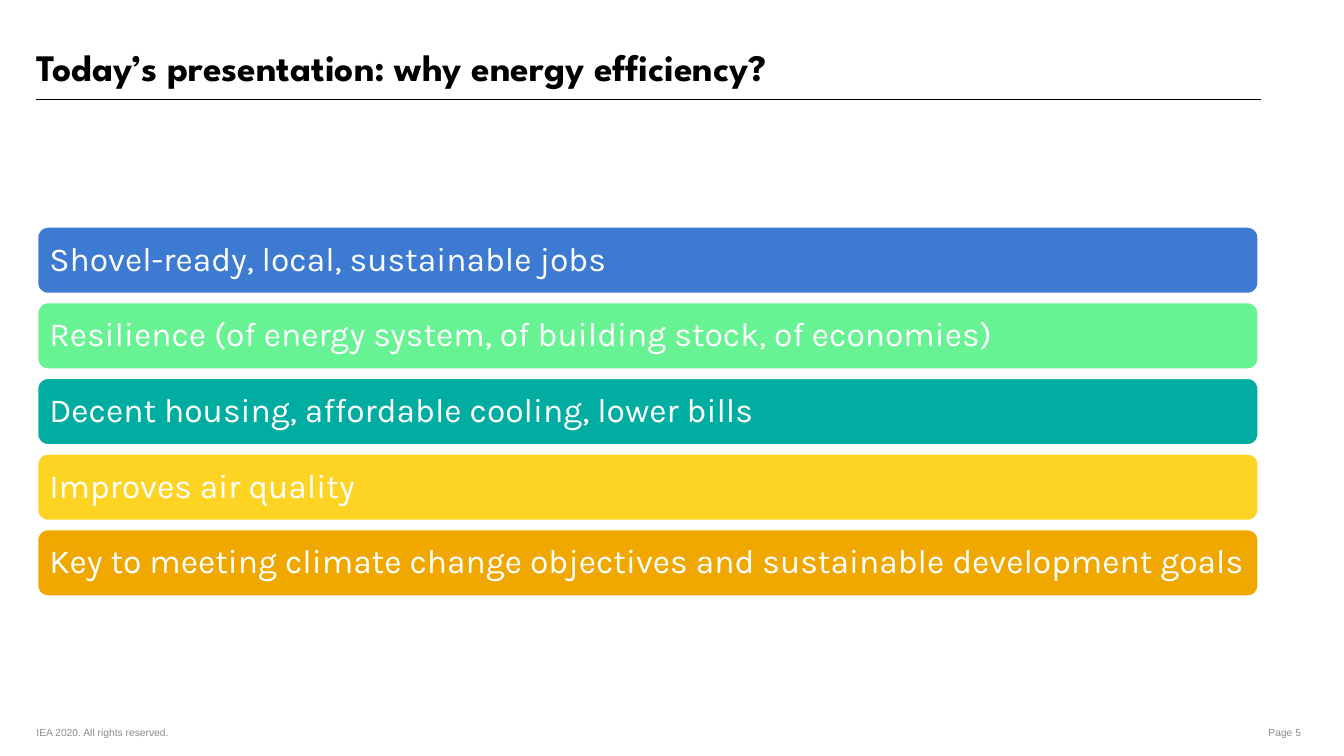
from lxml import etree
from pptx import Presentation
from pptx.dml.color import RGBColor
from pptx.enum.shapes import MSO_CONNECTOR, MSO_SHAPE
from pptx.enum.text import MSO_ANCHOR, MSO_AUTO_SIZE, PP_ALIGN
from pptx.oxml.ns import qn
from pptx.util import Cm, Pt

ROUNDED = MSO_SHAPE.ROUNDED_RECTANGLE
STRAIGHT = MSO_CONNECTOR.STRAIGHT
MIDDLE = MSO_ANCHOR.MIDDLE
NO_FIT = MSO_AUTO_SIZE.NONE
LEFT, RIGHT = PP_ALIGN.LEFT, PP_ALIGN.RIGHT

BLACK = RGBColor(0x00, 0x00, 0x00)
WHITE = RGBColor(0xFF, 0xFF, 0xFF)
GREY = RGBColor(0x8C, 0x8C, 0x8C)
BLUE = RGBColor(0x3D, 0x7A, 0xD2)
GREEN = RGBColor(0x67, 0xF3, 0x93)
TEAL = RGBColor(0x00, 0xAD, 0xA0)
YELLOW = RGBColor(0xFD, 0xD3, 0x24)
ORANGE = RGBColor(0xF0, 0xA8, 0x00)

MARGIN = 0.69
BAR_TOP, BAR_HEIGHT, BAR_PITCH = 4.27, 1.3, 1.43
BARS = [
    ("Shovel-ready, local, sustainable jobs", BLUE),
    ("Resilience (of energy system, of building stock, of economies)", GREEN),
    ("Decent housing, affordable cooling, lower bills", TEAL),
    ("Improves air quality", YELLOW),
    ("Key to meeting climate change objectives and sustainable development goals", ORANGE),
]
FOOTERS = [
    ("IEA 2020. All rights reserved.", MARGIN, LEFT),
    ("Page 5", 21.46, RIGHT),
]


def set_text(sp, text, font, size, color, insets, align=LEFT, bold=False):
    """Fill a shape with one vertically centred run; insets are left, top, right, bottom in cm."""
    tf = sp.text_frame
    tf.word_wrap = True
    tf.auto_size = NO_FIT
    tf.vertical_anchor = MIDDLE
    tf.margin_left, tf.margin_top, tf.margin_right, tf.margin_bottom = map(Cm, insets)
    p = tf.paragraphs[0]
    p.alignment = align
    p.space_before = Pt(0)
    r = p.add_run()
    r.text = text
    r.font.name = font
    r.font.size = Pt(size)
    r.font.bold = bold
    r.font.color.rgb = color
    return p


prs = Presentation()
prs.slide_width, prs.slide_height = Cm(25.4), Cm(14.29)
s = prs.slides.add_slide(prs.slide_layouts[5])

# Title and rule
title = s.shapes.title
title.left, title.top, title.width, title.height = Cm(MARGIN), Cm(0.64), Cm(23.11), Cm(1.22)
set_text(title, "Today’s presentation: why energy efficiency?", "League Spartan", 20,
         BLACK, (0, 0.13, 0.25, 0.13), bold=True)

rule = s.shapes.add_connector(STRAIGHT, Cm(MARGIN), Cm(1.88), Cm(23.83), Cm(1.88))
rule.line.color.rgb = BLACK
rule.line.width = Pt(0.75)
etree.SubElement(rule._element.spPr, qn("a:effectLst"))

# Reasons
for i, (text, color) in enumerate(BARS):
    sp = s.shapes.add_shape(ROUNDED, Cm(MARGIN), Cm(BAR_TOP + i * BAR_PITCH),
                            Cm(23.11), Cm(BAR_HEIGHT))
    sp.shadow.inherit = False
    sp.fill.solid()
    sp.fill.fore_color.rgb = color
    sp.line.color.rgb = WHITE
    sp.line.width = Pt(2)
    p = set_text(sp, text, "Karla", 18, WHITE, (0.18, 0.18, 0.1, 0.18))
    p.line_spacing = 0.9

# Footer
for text, left, align in FOOTERS:
    sp = s.shapes.add_textbox(Cm(left), Cm(13.59), Cm(3.38), Cm(0.51))
    set_text(sp, text, "Arial", 5.5, GREY, (0, 0.13, 0.25, 0.13), align)

prs.save("out.pptx")
